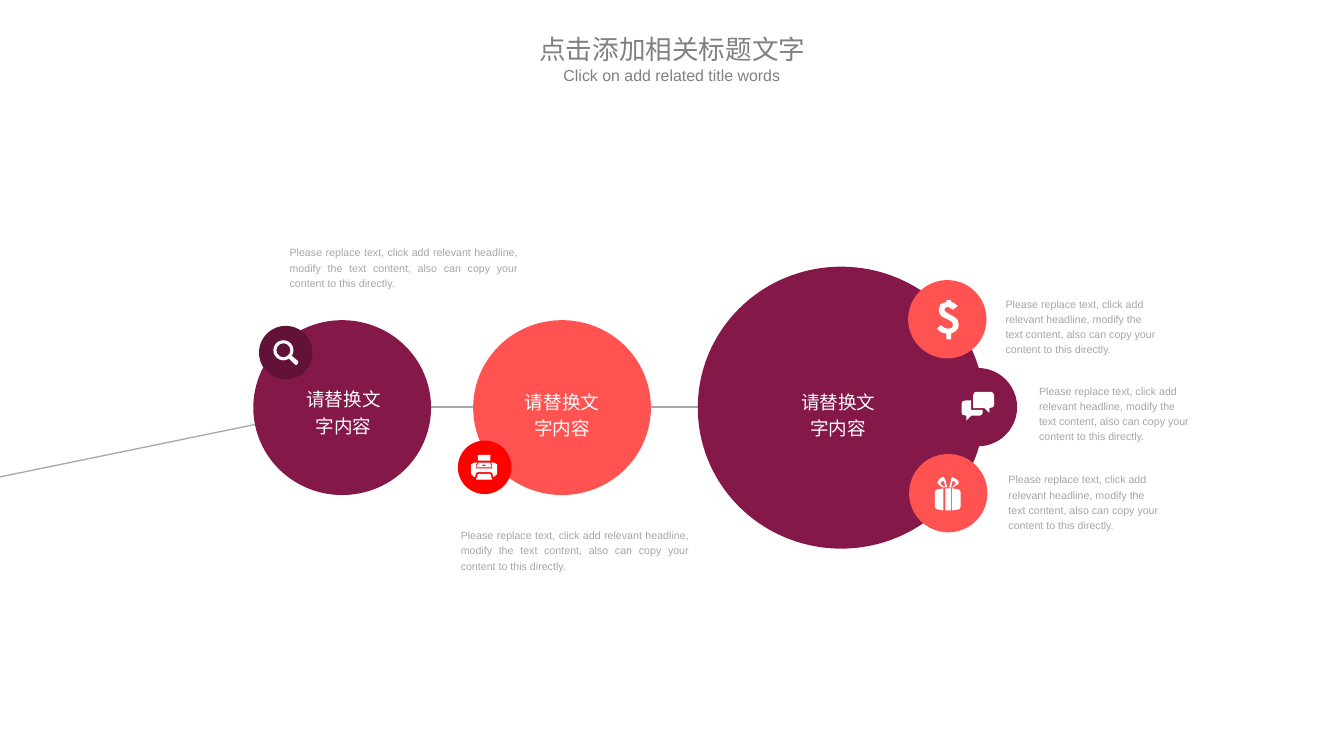
import lxml.etree
import pptx
import pptx.dml.color
import pptx.enum.shapes
import pptx.enum.text
import pptx.oxml.ns
import pptx.util

PLUM = pptx.dml.color.RGBColor(0x84, 0x18, 0x49)
DARK_PLUM = pptx.dml.color.RGBColor(0x63, 0x12, 0x37)
CORAL = pptx.dml.color.RGBColor(0xFF, 0x53, 0x51)
RED = pptx.dml.color.RGBColor(0xFC, 0x03, 0x00)
WHITE = pptx.dml.color.RGBColor(0xFF, 0xFF, 0xFF)
LABEL_WHITE = pptx.dml.color.RGBColor(0xFC, 0xFC, 0xFC)
LINE_GRAY = pptx.dml.color.RGBColor(0xA6, 0xAA, 0xA9)
BODY_GRAY = pptx.dml.color.RGBColor(0xA6, 0xA6, 0xA6)
TITLE_GRAY = pptx.dml.color.RGBColor(0x80, 0x80, 0x80)

LATIN = "Arial"
CHINESE = "Noto Sans CJK SC"
LABEL = "请替换文字内容"
BODY = ("Please replace text, click add relevant headline, modify the text content, "
        "also can copy your content to this directly.")

OVAL = pptx.enum.shapes.MSO_SHAPE.OVAL
DONUT = pptx.enum.shapes.MSO_SHAPE.DONUT
ALIGN = pptx.enum.text.PP_ALIGN
ANCHOR = pptx.enum.text.MSO_ANCHOR

HANDLE = [[(302, 375), (305, 372), (312, 378), (312, 380), (310, 382), (308, 381)]]
PRINTER = [
    [(500, 476), (513, 476), (513, 482), (500, 482)],
    [(500, 496), (513, 496), (515, 502), (498, 502)],
    [(499, 487), (501, 484), (512, 484), (514, 487), (514, 489), (499, 489)],
    [(504, 487), (506, 486), (509, 487), (506, 488)],
    [(517, 484), (513, 484), (515, 486), (515, 490), (498, 490), (498, 486), (500, 484),
     (496, 484), (493, 486), (493, 496), (496, 499), (497, 499), (498, 495), (500, 494),
     (513, 494), (515, 495), (516, 499), (517, 499), (520, 496), (520, 486)],
]
DOLLAR = [[
    (1002, 320), (997, 324), (992, 321), (989, 322), (988, 324), (989, 326), (992, 328),
    (999, 332), (1002, 335), (1003, 340), (1002, 344), (999, 347), (995, 349), (995, 355),
    (990, 355), (990, 349), (985, 348), (980, 344), (984, 340), (988, 343), (992, 344),
    (996, 343), (997, 340), (996, 337), (993, 335), (985, 331), (983, 328), (982, 324),
    (984, 318), (990, 316), (990, 314), (995, 314), (995, 316), (998, 317),
]]
SPEECH = [
    [(1021, 410), (1036, 410), (1039, 411), (1040, 414), (1040, 424), (1039, 426),
     (1035, 427), (1035, 432), (1030, 427), (1018, 427), (1018, 414), (1019, 411)],
    [(1010, 419), (1016, 419), (1016, 429), (1028, 429), (1028, 432), (1027, 434),
     (1025, 435), (1016, 435), (1011, 440), (1011, 435), (1007, 434), (1006, 432),
     (1006, 422), (1007, 420)],
]
GIFT = [
    [(986, 499), (983, 501), (981, 504), (981, 506), (986, 510), (991, 510), (989, 502),
     (987, 499)],
    [(996, 499), (1000, 501), (1003, 504), (1003, 506), (997, 510), (993, 510), (995, 502)],
    [(987, 503), (988, 505), (989, 509), (987, 509), (984, 506), (985, 504)],
    [(997, 503), (999, 504), (1000, 506), (997, 509), (995, 509), (996, 505)],
    [(989, 511), (995, 511), (995, 534), (989, 534)],
    [(987, 511), (987, 534), (981, 533), (979, 532), (978, 530), (978, 515), (979, 513),
     (981, 512)],
    [(996, 511), (1003, 512), (1004, 513), (1005, 515), (1005, 530), (1004, 532),
     (1003, 533), (996, 534)],
]


class SlideBuilder:
    """Draws styled elements on one slide, in px of a hundredth of an inch."""

    SCALE = 9144

    def __init__(self, presentation):
        presentation.slide_width = self.emu(1406)
        presentation.slide_height = self.emu(791)
        self.slide = presentation.slides.add_slide(presentation.slide_layouts[5])
        self.shapes = self.slide.shapes

    def emu(self, length):
        return pptx.util.Emu(length * self.SCALE)

    def box(self, *lengths):
        return [self.emu(length) for length in lengths]

    def paint(self, shape, color):
        shape.shadow.inherit = False
        shape.fill.solid()
        shape.fill.fore_color.rgb = color
        shape.line.fill.background()

    def preset(self, kind, left, top, width, height, color):
        shape = self.shapes.add_shape(kind, *self.box(left, top, width, height))
        self.paint(shape, color)
        return shape

    def icon(self, outlines):
        builder = None
        for outline in outlines:
            start, *rest = [self.box(*point) for point in outline]
            if builder is None:
                builder = self.shapes.build_freeform(*start, scale=1.0)
            else:
                builder.move_to(*start)
            builder.add_line_segments(rest, close=True)
        self.paint(builder.convert_to_shape(), WHITE)

    def line(self, *ends):
        straight = pptx.enum.shapes.MSO_CONNECTOR.STRAIGHT
        connector = self.shapes.add_connector(straight, *self.box(*ends))
        connector.line.color.rgb = LINE_GRAY
        connector.line.width = pptx.util.Pt(1)
        properties = connector._element.spPr
        lxml.etree.SubElement(properties, pptx.oxml.ns.qn("a:effectLst"))

    def fill_text(self, shape, text, size, color, align, anchor, font=LATIN):
        frame = shape.text_frame
        frame.word_wrap = True
        frame.auto_size = pptx.enum.text.MSO_AUTO_SIZE.NONE
        frame.vertical_anchor = anchor
        frame.margin_left = frame.margin_right = 0
        frame.margin_top = frame.margin_bottom = 0
        frame.text = text
        paragraph = frame.paragraphs[0]
        paragraph.alignment = align
        paragraph.font.size = pptx.util.Pt(size)
        paragraph.font.name = font
        paragraph.font.color.rgb = color
        defaults = paragraph._p.pPr.find(pptx.oxml.ns.qn("a:defRPr"))
        east_asian = lxml.etree.SubElement(defaults, pptx.oxml.ns.qn("a:ea"))
        east_asian.set("typeface", CHINESE)
        return paragraph

    def title(self, text, left, top, width, height):
        shape = self.shapes.title
        shape.left, shape.top, shape.width, shape.height = self.box(left, top, width, height)
        self.fill_text(shape, text, 20, TITLE_GRAY, ALIGN.CENTER, ANCHOR.TOP, CHINESE)

    def text(self, text, left, top, width, height, size, color, align, anchor):
        shape = self.shapes.add_textbox(*self.box(left, top, width, height))
        return self.fill_text(shape, text, size, color, align, anchor)

    def label(self, left, top, width):
        paragraph = self.text(LABEL, left, top, width, 54, 14, LABEL_WHITE,
                              ALIGN.CENTER, ANCHOR.MIDDLE)
        paragraph.line_spacing = 1.2
        paragraph.space_before = pptx.util.Pt(10)

    def body(self, left, top, width, height, align, anchor):
        paragraph = self.text(BODY, left, top, width, height, 8, BODY_GRAY, align, anchor)
        paragraph.line_spacing = 1.2


def main():
    presentation = pptx.Presentation()
    builder = SlideBuilder(presentation)

    builder.title("点击添加相关标题文字", 536, 34, 335, 36)
    builder.text("Click on add related title words", 576, 69, 254, 36, 12, TITLE_GRAY,
                 ALIGN.CENTER, ANCHOR.TOP)

    for ends in ((594, 426, 893, 426), (361, 426, 588, 426), (0, 499, 355, 426)):
        builder.line(*ends)

    for left, top, width, height, color in (
        (730, 279, 300, 295, PLUM),
        (265, 335, 186, 183, PLUM),
        (495, 335, 186, 183, CORAL),
    ):
        builder.preset(OVAL, left, top, width, height, color)

    for left, top, size, color, outlines in (
        (271, 341, 56, DARK_PLUM, HANDLE),
        (479, 461, 56, RED, PRINTER),
        (950, 293, 82, CORAL, DOLLAR),
        (982, 385, 82, PLUM, SPEECH),
        (951, 475, 82, CORAL, GIFT),
    ):
        builder.preset(OVAL, left, top, size, size, color)
        builder.icon(outlines)
    lens = builder.preset(DONUT, 286, 356, 21, 21, WHITE)
    lens.adjustments[0] = 0.15

    for left, top, width in ((829, 405, 96), (317, 402, 85), (544, 405, 88)):
        builder.label(left, top, width)

    for left, top in ((303, 255), (482, 551)):
        builder.body(left, top, 239, 47, ALIGN.JUSTIFY, ANCHOR.TOP)
    for left, top, width in ((1052, 309, 159), (1087, 400, 157), (1055, 493, 159)):
        builder.body(left, top, width, 63, ALIGN.LEFT, ANCHOR.MIDDLE)

    presentation.save("out.pptx")


if __name__ == "__main__":
    main()
